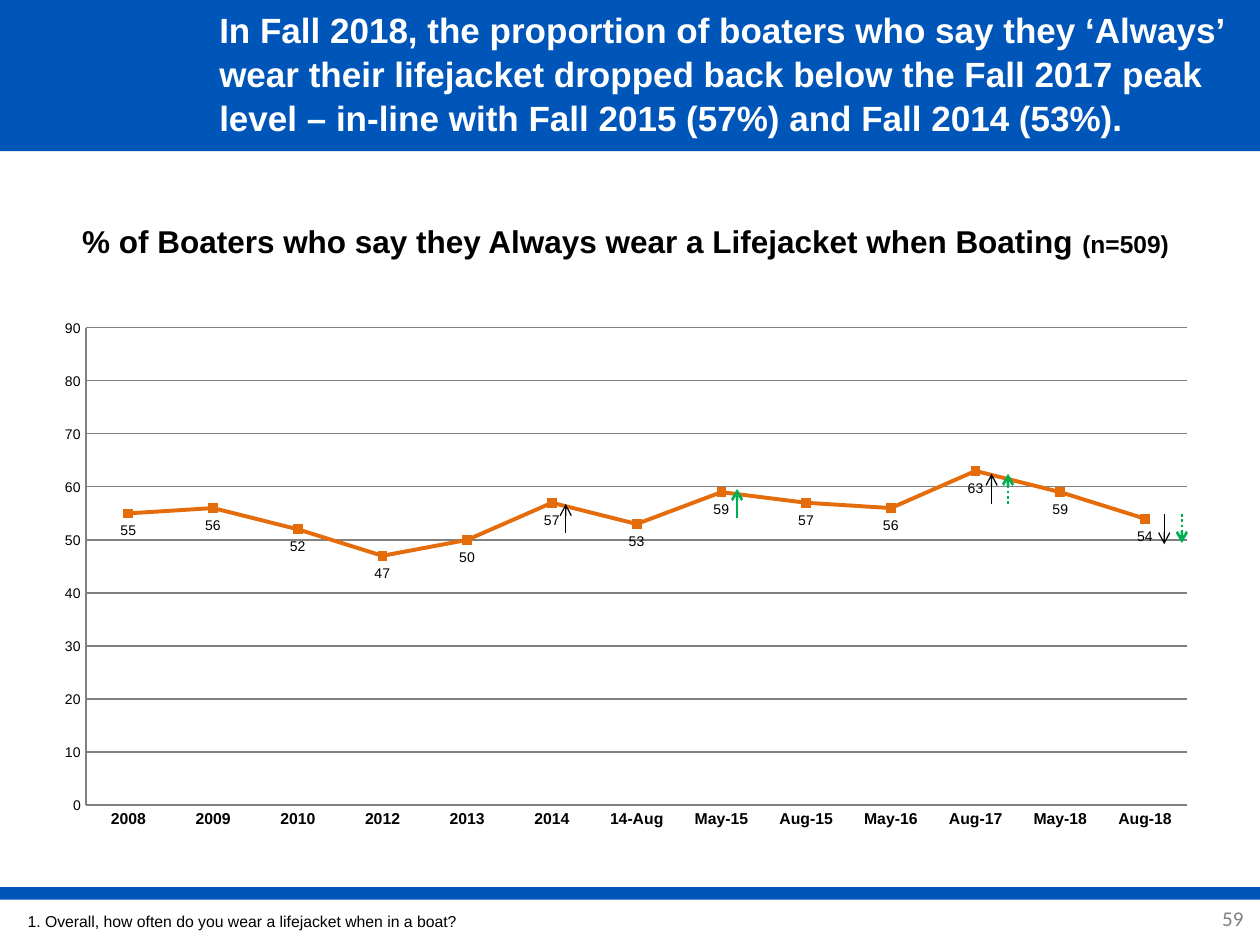
import pptx
import pptx.chart.data
import pptx.dml.color
import pptx.enum.chart
import pptx.enum.dml
import pptx.enum.shapes
import pptx.enum.text
import pptx.oxml
import pptx.oxml.ns
import pptx.util
from lxml import etree

Inches, Pt = pptx.util.Inches, pptx.util.Pt
RGB = pptx.dml.color.RGBColor
ALIGN = pptx.enum.text.PP_ALIGN
ANCHOR = pptx.enum.text.MSO_ANCHOR
XL = pptx.enum.chart
qn = pptx.oxml.ns.qn

BLUE = RGB(0x00, 0x55, 0xB9)
ORANGE = RGB(0xE4, 0x6C, 0x0A)
GREEN = RGB(0x00, 0xB0, 0x50)
GREY = RGB(0x80, 0x80, 0x80)
BLACK = RGB(0, 0, 0)
WHITE = RGB(255, 255, 255)

prs = pptx.Presentation()
prs.slide_width, prs.slide_height = Inches(10), Inches(7.5)
W = prs.slide_width
s = prs.slides.add_slide(prs.slide_layouts[5])


def add_text(sp, text, size=9, color=BLACK, bold=False, font="Arial",
             align=ALIGN.LEFT, anchor=ANCHOR.MIDDLE):
    """Append a formatted run to the first paragraph of a shape."""
    tf = sp.text_frame
    tf.word_wrap = True
    tf.auto_size = pptx.enum.text.MSO_AUTO_SIZE.NONE
    tf.vertical_anchor = anchor
    p = tf.paragraphs[0]
    p.alignment = align
    r = p.add_run()
    r.text = text
    r.font.name, r.font.size, r.font.bold = font, Pt(size), bold
    r.font.color.rgb = color


# Blue bands at top and bottom
for top, height in ((-0.03, 1.23), (7.04, 0.1)):
    sp = s.shapes.add_shape(pptx.enum.shapes.MSO_SHAPE.RECTANGLE,
                            0, Inches(top), W, Inches(height))
    sp.shadow.inherit = False
    sp.fill.solid()
    sp.fill.fore_color.rgb = BLUE
    sp.line.fill.background()

# Title, brought in front of the band
title = s.shapes.title
title.left, title.top = Inches(1.64), 0
title.width, title.height = Inches(8.25), Inches(1.15)
title.element.getparent().append(title.element)
add_text(title, "In Fall 2018, the proportion of boaters who say they ‘Always’ "
         "wear their lifejacket dropped back below the Fall 2017 peak level – "
         "in-line with Fall 2015 (57%) and Fall 2014 (53%).",
         size=20, color=WHITE, bold=True)
title.text_frame.paragraphs[0].line_spacing = 1.05

# Slide number
sp = s.shapes.add_textbox(Inches(9.36), Inches(7.09), Inches(0.63), Inches(0.4))
sp.text_frame.margin_right = Inches(0.12)
sp.text_frame.margin_left = Inches(0.04)
add_text(sp, "59", size=12, color=GREY, font="Calibri", align=ALIGN.RIGHT)

# Line chart
data = pptx.chart.data.CategoryChartData()
data.categories = ["2008", "2009", "2010", "2012", "2013", "2014", "14-Aug",
                   "May-15", "Aug-15", "May-16", "Aug-17", "May-18", "Aug-18"]
data.add_series("Series 1", (55, 56, 52, 47, 50, 57, 53, 59, 57, 56, 63, 59, 54))
chart = s.shapes.add_chart(XL.XL_CHART_TYPE.LINE_MARKERS, Inches(0.33), Inches(2.45),
                           Inches(9.28), Inches(4.21), data).chart
chart.has_legend = chart.has_title = False
chart.font.name, chart.font.size = "Arial", Pt(8)
chart.font.color.rgb = BLACK

cat, val = chart.category_axis, chart.value_axis
val.minimum_scale, val.maximum_scale, val.major_unit = 0, 90, 10
val.has_major_gridlines = True
cat.tick_labels.font.size, cat.tick_labels.font.bold = Pt(9), True
for axis in (cat, val):
    axis.major_tick_mark = XL.XL_TICK_MARK.NONE
for line in (cat.format.line, val.format.line, val.major_gridlines.format.line):
    line.color.rgb, line.width = GREY, Pt(0.75)

plot = chart.plots[0]
plot.vary_by_categories = False
plot.has_data_labels = True
plot.data_labels.show_value = True
plot.data_labels.position = XL.XL_LABEL_POSITION.BELOW
series = plot.series[0]
series.smooth = False
series.format.line.color.rgb, series.format.line.width = ORANGE, Pt(2.25)
series.marker.style, series.marker.size = XL.XL_MARKER_STYLE.SQUARE, 5
series.marker.format.fill.solid()
series.marker.format.fill.fore_color.rgb = ORANGE
series.marker.format.line.color.rgb = ORANGE

# Fixed inner plot area, as shares of the chart
area = chart.element.find(".//" + qn("c:plotArea"))
for old in area.findall(qn("c:layout")):
    area.remove(old)
layout = etree.Element(qn("c:layout"))
manual = etree.SubElement(layout, qn("c:manualLayout"))
for tag, value in (("layoutTarget", "inner"), ("xMode", "edge"), ("yMode", "edge"),
                   ("x", "0.038"), ("y", "0.036"), ("w", "0.942"), ("h", "0.9")):
    etree.SubElement(manual, qn("c:" + tag)).set("val", value)
area.insert(0, layout)

# Chart heading
sp = s.shapes.add_textbox(Inches(0.42), Inches(1.71), Inches(9.09), Inches(0.66))
for text, size in (("% of Boaters who say they Always wear a Lifejacket when Boating ", 18),
                   ("(n=509)", 14)):
    add_text(sp, text, size=size, bold=True, align=ALIGN.CENTER, anchor=ANCHOR.TOP)

# Footnote
sp = s.shapes.add_textbox(Inches(0.12), Inches(7.12), Inches(5.71), Inches(0.38))
add_text(sp, "1. Overall, how often do you wear a lifejacket when in a boat?")

# Change arrows: x, start y, end y, colour, weight, dotted
for x, y1, y2, color, weight, dotted in (
        (4.49, 4.23, 4.0, BLACK, 0.75, False),
        (5.85, 4.11, 3.88, GREEN, 1.5, False),
        (7.87, 4.0, 3.76, BLACK, 0.75, False),
        (8.0, 4.0, 3.76, GREEN, 1.5, True),
        (9.24, 4.08, 4.32, BLACK, 0.75, False),
        (9.38, 4.08, 4.31, GREEN, 1.5, True)):
    c = s.shapes.add_connector(pptx.enum.shapes.MSO_CONNECTOR.STRAIGHT,
                               Inches(x), Inches(y1), Inches(x), Inches(y2))
    c.line.color.rgb, c.line.width = color, Pt(weight)
    if dotted:
        c.line.dash_style = pptx.enum.dml.MSO_LINE.ROUND_DOT
    ln = c.line.get_or_add_ln() if hasattr(c.line, "get_or_add_ln") else c.get_or_add_ln()
    etree.SubElement(ln, qn("a:tailEnd")).set("type", "arrow")
    etree.SubElement(c.element.spPr, qn("a:effectLst"))

prs.save("out.pptx")
